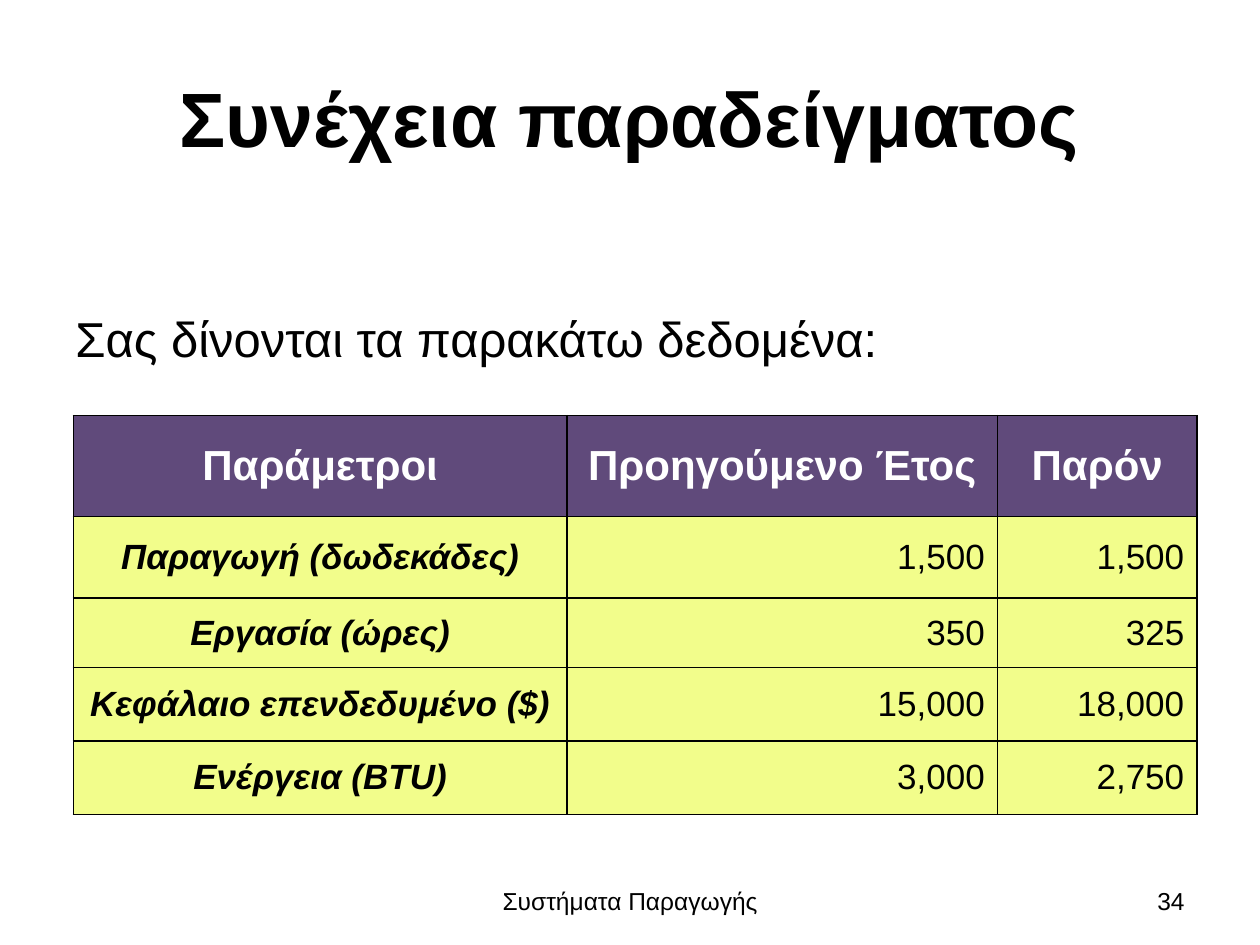
from dataclasses import dataclass

from lxml.etree import SubElement
from pptx import Presentation
from pptx.dml.color import RGBColor
from pptx.enum.text import MSO_ANCHOR, PP_ALIGN
from pptx.oxml.ns import qn
from pptx.util import Cm, Pt


@dataclass(frozen=True)
class Theme:
    font: str = "Arial"
    ink: str = "000000"
    header_ink: str = "FFFFFF"
    header_fill: str = "604A7B"
    body_fill: str = "F2FD8B"
    title_size: int = 44
    lead_size: int = 28
    header_size: int = 24
    cell_size: int = 20
    footer_size: int = 14
    border_width: int = 1


class SlideBuilder:
    def __init__(self, slide, theme):
        self.slide = slide
        self.theme = theme

    def add_span(self, frame, text, size, align, color=None, bold=False, italic=False):
        para = frame.paragraphs[0]
        para.alignment = align
        span = para.add_run()
        span.text = text
        span.font.name = self.theme.font
        span.font.size = Pt(size)
        span.font.bold = bold
        span.font.italic = italic
        span.font.color.rgb = RGBColor.from_string(color or self.theme.ink)

    def title(self, text, left, top, width, height):
        box = self.slide.shapes.title
        box.left, box.top, box.width, box.height = map(Cm, (left, top, width, height))
        box.text_frame.vertical_anchor = MSO_ANCHOR.MIDDLE
        self.add_span(box.text_frame, text, self.theme.title_size, PP_ALIGN.CENTER, bold=True)

    def text(self, text, left, top, width, height, size,
             align=PP_ALIGN.LEFT, anchor=MSO_ANCHOR.MIDDLE, inset=0.13):
        box = self.slide.shapes.add_textbox(*map(Cm, (left, top, width, height)))
        frame = box.text_frame
        frame.word_wrap = True
        frame.vertical_anchor = anchor
        frame.margin_top = Cm(inset)
        self.add_span(frame, text, size, align)

    def border(self, cell):
        properties = cell._tc.get_or_add_tcPr()
        for position, side in enumerate(("a:lnL", "a:lnR", "a:lnT", "a:lnB")):
            line = SubElement(properties, qn(side), w=str(Pt(self.theme.border_width)))
            fill = SubElement(line, qn("a:solidFill"))
            SubElement(fill, qn("a:srgbClr"), val=self.theme.ink)
            properties.insert(position, line)

    def cell(self, cell, text, is_header, is_label):
        theme = self.theme
        cell.fill.solid()
        cell.fill.fore_color.rgb = RGBColor.from_string(
            theme.header_fill if is_header else theme.body_fill)
        cell.vertical_anchor = MSO_ANCHOR.MIDDLE
        self.border(cell)
        self.add_span(
            cell.text_frame, text,
            theme.header_size if is_header else theme.cell_size,
            PP_ALIGN.CENTER if is_header or is_label else PP_ALIGN.RIGHT,
            color=theme.header_ink if is_header else theme.ink,
            bold=is_header or is_label,
            italic=is_label and not is_header)

    def table(self, rows, left, top, widths, heights):
        table = self.slide.shapes.add_table(
            len(rows), len(widths), Cm(left), Cm(top),
            Cm(sum(widths)), Cm(sum(heights))).table
        for column, width in zip(table.columns, widths):
            column.width = Cm(width)
        for row, height in zip(table.rows, heights):
            row.height = Cm(height)
        for r, values in enumerate(rows):
            for c, value in enumerate(values):
                self.cell(table.cell(r, c), value, r == 0, c == 0)


def main():
    deck = Presentation()
    deck.slide_width, deck.slide_height = Cm(25.4), Cm(19.05)
    theme = Theme()
    page = SlideBuilder(deck.slides.add_slide(deck.slide_layouts[5]), theme)

    page.title("Συνέχεια παραδείγματος", 1.27, 0.76, 22.86, 3.18)
    page.text("Σας δίνονται τα παρακάτω δεδομένα:", 1.27, 5.51, 22.86, 1.9,
              theme.lead_size, anchor=MSO_ANCHOR.TOP, inset=0.7)
    page.table(
        [
            ("Παράμετροι", "Προηγούμενο Έτος", "Παρόν"),
            ("Παραγωγή (δωδεκάδες)", "1,500", "1,500"),
            ("Εργασία (ώρες)", "350", "325"),
            ("Κεφάλαιο επενδεδυμένο ($)", "15,000", "18,000"),
            ("Ενέργεια (BTU)", "3,000", "2,750"),
        ],
        left=1.48, top=8.38,
        widths=(9.95, 8.68, 4.02),
        heights=(2.03, 1.65, 1.4, 1.48, 1.48))
    page.text("Συστήματα Παραγωγής", 8.68, 17.65, 8.05, 1.02,
              theme.footer_size, PP_ALIGN.CENTER)
    page.text("34", 18.21, 17.65, 5.92, 1.02, theme.footer_size, PP_ALIGN.RIGHT)

    deck.save("out.pptx")


if __name__ == "__main__":
    main()
